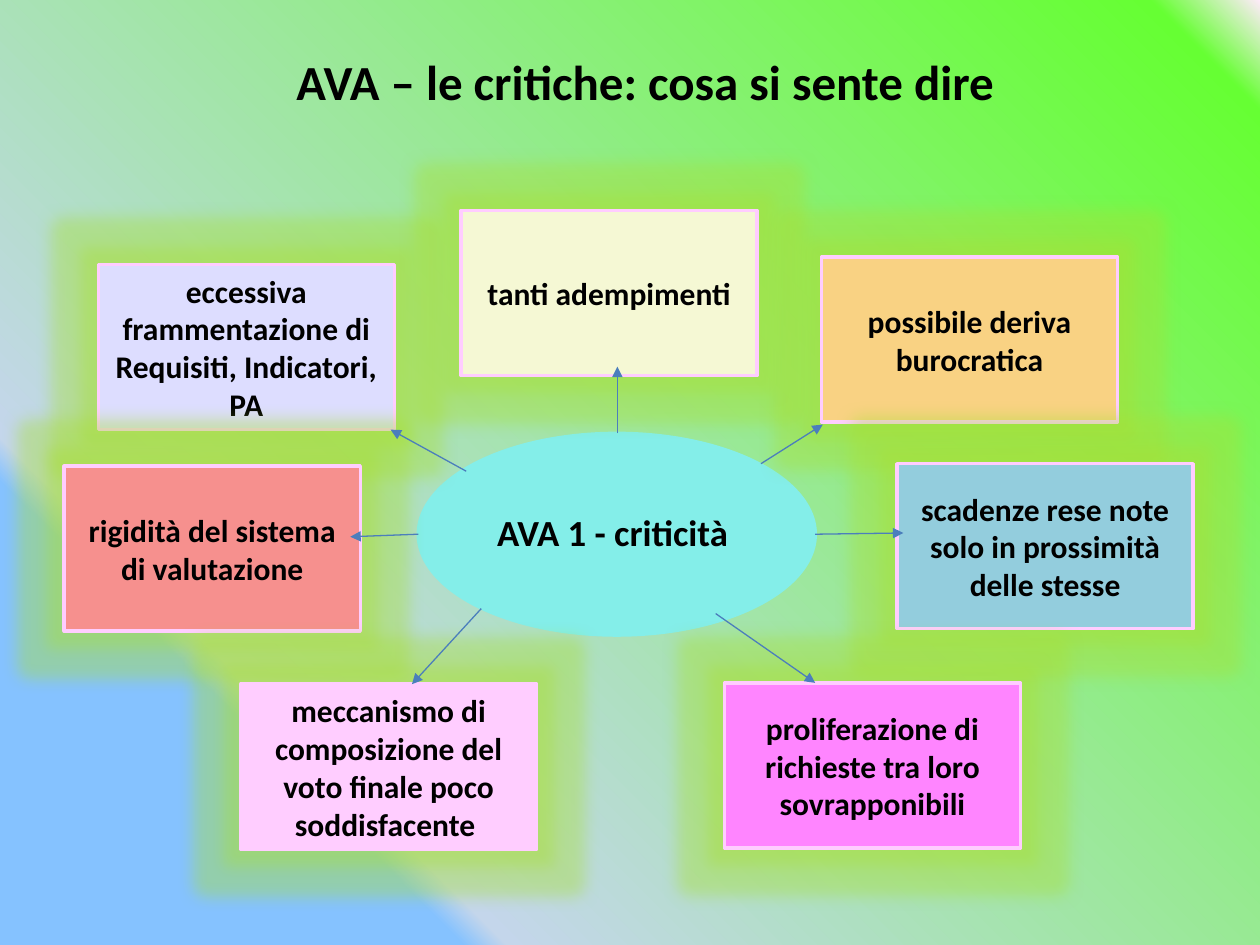
from lxml.etree import SubElement
from pptx import Presentation
from pptx.dml.color import RGBColor
from pptx.enum.shapes import MSO_CONNECTOR, MSO_SHAPE
from pptx.enum.text import MSO_ANCHOR, PP_ALIGN
from pptx.oxml import parse_xml
from pptx.oxml.ns import nsdecls, qn
from pptx.util import Inches, Pt

colour = RGBColor.from_string

deck = Presentation()
deck.slide_width, deck.slide_height = Inches(10), Inches(7.5)
COL, ROW = deck.slide_width / 100, deck.slide_height / 75
slide = deck.slides.add_slide(deck.slide_layouts[5])


def on_grid(*cells):
    """Turn alternating column and row counts into lengths."""
    return [round(n * (ROW if i % 2 else COL)) for i, n in enumerate(cells)]


def write(holder, text, size):
    frame = holder.text_frame
    frame.text = text
    frame.word_wrap = True
    frame.vertical_anchor = MSO_ANCHOR.MIDDLE
    paragraph = frame.paragraphs[0]
    paragraph.alignment = PP_ALIGN.CENTER
    font = paragraph.font
    font.name, font.size, font.bold = "Calibri", Pt(size), True
    font.color.rgb = colour("000000")
    return frame


# Background: gradient spreading from the bottom left corner
stops = [(21, "85C2FF", 39), (23, "C4D6EB", 93), (95, "66FF33", 34), (100, "FFEBFA", 89)]
stop_xml = "".join(
    f'<a:gs pos="{place * 1000}"><a:srgbClr val="{colour(tint)}">'
    f'<a:alpha val="{alpha * 1000}"/></a:srgbClr></a:gs>'
    for place, tint, alpha in stops
)
slide.background.fill.solid()
background = slide.element.cSld.find(qn("p:bg")).find(qn("p:bgPr"))
background.replace(background[0], parse_xml(
    f'<a:gradFill {nsdecls("a")} rotWithShape="1"><a:gsLst>{stop_xml}</a:gsLst>'
    '<a:path path="circle"><a:fillToRect t="100000" r="100000"/></a:path></a:gradFill>'
))

# Title
title = slide.shapes.title
title.left, title.top, title.width, title.height = on_grid(7.5, 2.1, 87.4, 8.7)
write(title, "AVA – le critiche: cosa si sente dire", 28)

# Central theme
theme = slide.shapes.add_shape(MSO_SHAPE.OVAL, *on_grid(33.2, 34.4, 31.5, 16))
theme.shadow.inherit = False
theme.fill.solid()
theme.fill.fore_color.rgb = theme.line.color.rgb = colour("84EEE9")
theme.line.width = Pt(2)
theme_frame = write(theme, "AVA 1 - criticità ", 21)
theme_frame.paragraphs[0].line_spacing = 0.9

# Criticisms: left column, top row, fill, text
criticisms = [
    (65.2, 20.4, "F9D283", "possibile deriva burocratica"),
    (7.8, 21, "DDDDFF", "eccessiva frammentazione di Requisiti, Indicatori, PA"),
    (36.6, 16.7, "F5F8D4", "tanti adempimenti"),
    (5.1, 37, "F6908E", "rigidità del sistema di valutazione"),
    (19.1, 54.3, "FFCDFF", "meccanismo di composizione del voto finale poco soddisfacente "),
    (71.2, 36.8, "93CDDD", "scadenze rese note solo in prossimità delle stesse"),
    (57.5, 54.2, "FF85FF", "proliferazione di richieste tra loro sovrapponibili"),
]
for left, top, tint, text in criticisms:
    criticism = slide.shapes.add_shape(MSO_SHAPE.RECTANGLE, *on_grid(left, top, 23.5, 13.1))
    criticism.shadow.inherit = False
    criticism.fill.solid()
    criticism.fill.fore_color.rgb = colour(tint)
    criticism.line.color.rgb = colour("FFCDFF")
    criticism.line.width = Pt(2)
    write(criticism, text, 18)
    # Soft green glow around the box
    effects = criticism.element.spPr.find(qn("a:effectLst"))
    glow = SubElement(effects, qn("a:glow"), rad=str(Pt(18)))
    glow_colour = SubElement(glow, qn("a:srgbClr"), val=str(colour("A8E034")))
    SubElement(glow_colour, qn("a:alpha"), val="40000")

# Arrows from the theme to each criticism
arrows = [
    (37, 37.4, 31, 34.1),
    (49, 34.4, 49, 29.1),
    (33.2, 42.4, 27.8, 42.6),
    (38.2, 48.3, 32.7, 54.3),
    (56.8, 48.7, 64.7, 54.2),
    (60.4, 36.8, 65.3, 33.7),
    (64.7, 42.4, 71.7, 42.3),
]
for ends in arrows:
    arrow = slide.shapes.add_connector(MSO_CONNECTOR.STRAIGHT, *on_grid(*ends))
    arrow.line.color.rgb = colour("4B7EBC")
    arrow.line.width = Pt(0.75)
    SubElement(arrow.line._get_or_add_ln(), qn("a:tailEnd"), type="triangle")
    SubElement(arrow._element.spPr, qn("a:effectLst"))

deck.save("out.pptx")
